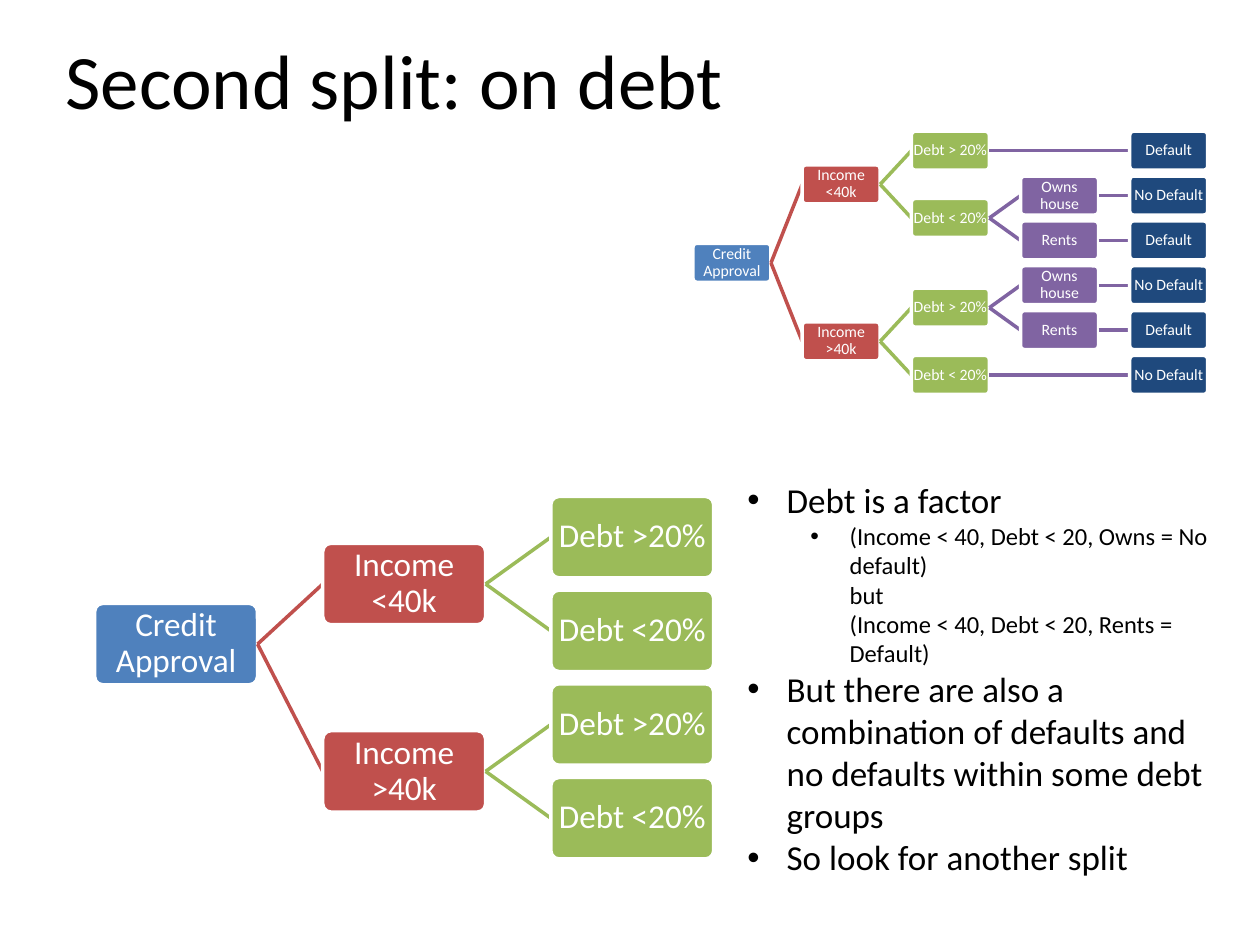
from lxml import etree
from pptx import Presentation
from pptx import util as u
from pptx.dml.color import RGBColor
from pptx.enum import shapes, text
from pptx.oxml import ns

Pt = u.Pt
COLORS = {
    "text": "000000",
    "white": "FFFFFF",
    "root": "4F81BD",
    "income": "C0504D",
    "debt": "9BBB59",
    "home": "8064A2",
    "result": "1F497D",
}
# Fill and incoming line for each column of a tree
BOX_FILLS = ["root", "income", "debt", "home", "result"]
LINE_FILLS = [None, "income", "debt", "home", "home"]


def rgb(name):
    return RGBColor.from_string(COLORS[name])


def write(p, value, size, color="text", align=text.PP_ALIGN.LEFT, spacing=1.0):
    """Fill a paragraph; a vertical tab in the value breaks the line."""
    p.text = value
    p.alignment = align
    p.line_spacing = spacing
    p.space_before = p.space_after = Pt(0)
    for r in p.runs:
        r.font.name = "Calibri"
        r.font.size = Pt(size)
        r.font.color.rgb = rgb(color)


def add_bullet(p, margin, hang):
    pPr = p._p.get_or_add_pPr()
    pPr.set("marL", str(Pt(margin)))
    pPr.set("indent", str(-Pt(hang)))
    etree.SubElement(pPr, ns.qn("a:buFont")).set("typeface", "Arial")
    etree.SubElement(pPr, ns.qn("a:buChar")).set("char", "•")


def place(sp, left, top, width, height):
    sp.left, sp.top, sp.width, sp.height = map(Pt, (left, top, width, height))


def add_title(s, value, box):
    sp = s.shapes.title
    place(sp, *box)
    sp.text_frame.vertical_anchor = text.MSO_ANCHOR.MIDDLE
    write(sp.text_frame.paragraphs[0], value, 44)


def add_findings(s, items, box):
    """Items are (level, text) pairs."""
    sp = s.placeholders[1]
    place(sp, *box)
    tf = sp.text_frame
    tf.word_wrap = True
    tf.auto_size = text.MSO_AUTO_SIZE.SHAPE_TO_FIT_TEXT
    tf.vertical_anchor = text.MSO_ANCHOR.TOP
    for i, (level, value) in enumerate(items):
        p = tf.add_paragraph() if i else tf.paragraphs[0]
        p.level = level
        write(p, value, 14 if level else 20)
        add_bullet(p, 22.5 + 36 * level, 22.5)


def add_node(group, label, col, left, top, width, size):
    sp = group.shapes.add_shape(shapes.MSO_SHAPE.ROUNDED_RECTANGLE,
                                Pt(left), Pt(top), Pt(width), Pt(width / 2))
    sp.adjustments[0] = 0.1
    sp.shadow.inherit = False
    sp.fill.solid()
    sp.fill.fore_color.rgb = rgb(BOX_FILLS[col])
    sp.line.color.rgb = rgb("white")
    sp.line.width = Pt(2)
    tf = sp.text_frame
    tf.word_wrap = True
    tf.vertical_anchor = text.MSO_ANCHOR.MIDDLE
    tf.margin_left = tf.margin_right = Pt(size / 20)
    tf.margin_top = tf.margin_bottom = Pt(size / 20)
    write(tf.paragraphs[0], label, size, "white", text.PP_ALIGN.CENTER, 0.9)
    return sp


def add_branch(group, color, x1, y1, x2, y2):
    line = group.shapes.add_connector(shapes.MSO_CONNECTOR.STRAIGHT,
                                      Pt(x1), Pt(y1), Pt(x2), Pt(y2))
    line.line.color.rgb = rgb(color)
    line.line.width = Pt(2)
    etree.SubElement(line._element.spPr, ns.qn("a:effectLst"))
    return line


def count_leaves(node):
    return sum(map(count_leaves, node[2])) or 1


def middle_row(node, first_row):
    """Row halfway between the first and the last child."""
    children = node[2]
    if not children:
        return first_row
    last_row = first_row + count_leaves(node) - count_leaves(children[-1])
    return (middle_row(children[0], first_row)
            + middle_row(children[-1], last_row)) / 2


def add_tree(s, root, left, top, width, size, root_shift=0):
    """Draw a (label, column, children) tree with boxes half as high as wide."""
    group = s.shapes.add_group_shape()
    height = width / 2

    def position(node, first_row):
        y = top + middle_row(node, first_row) * height * 1.15
        return left + node[1] * width * 1.4, y + (root_shift if node is root else 0)

    def draw(node, first_row):
        label, col, children = node
        x, y = position(node, first_row)
        sp = add_node(group, label, col, x, y, width, size)
        for child in children:
            cx, cy = position(child, first_row)
            line = add_branch(group, LINE_FILLS[child[1]],
                              x + width, y + height / 2, cx, cy + height / 2)
            child_sp = draw(child, first_row)
            line.begin_connect(sp, 3)
            line.end_connect(child_sp, 1)
            first_row += count_leaves(child)
        return sp

    draw(root, 0)


def result(label):
    return (label, 4, [])


def homes():
    return [("Owns house", 3, [result("No Default")]),
            ("Rents", 3, [result("Default")])]


def main():
    prs = Presentation()
    prs.slide_width, prs.slide_height = Pt(720), Pt(540)
    s = prs.slides.add_slide(prs.slide_layouts[1])

    add_title(s, "Second split: on debt", (30.24, 0, 648, 90))

    split_tree = ("Credit\vApproval", 0, [
        (f"Income {limit}", 1, [("Debt >20%", 2, []), ("Debt <20%", 2, [])])
        for limit in ("<40k", ">40k")])
    add_tree(s, split_tree, 54.1, 283.7, 93.1, 19, root_shift=-19.2)

    add_findings(s, [
        (0, "Debt is a factor"),
        (1, "(Income < 40, Debt < 20, Owns = No default) \vbut \v"
            "(Income < 40, Debt < 20, Rents = Default)"),
        (0, "But there are also a combination of defaults and no defaults "
            "within some debt groups"),
        (0, "So look for another split"),
    ], (419.8, 270, 282.2, 237.6))

    full_tree = ("Credit\vApproval", 0, [
        ("Income\v<40k", 1, [("Debt > 20%", 2, [result("Default")]),
                             ("Debt < 20%", 2, homes())]),
        ("Income\v>40k", 1, [("Debt > 20%", 2, homes()),
                             ("Debt < 20%", 2, [result("No Default")])])])
    add_tree(s, full_tree, 396, 75, 44.57, 9)

    prs.save("out.pptx")


if __name__ == "__main__":
    main()
